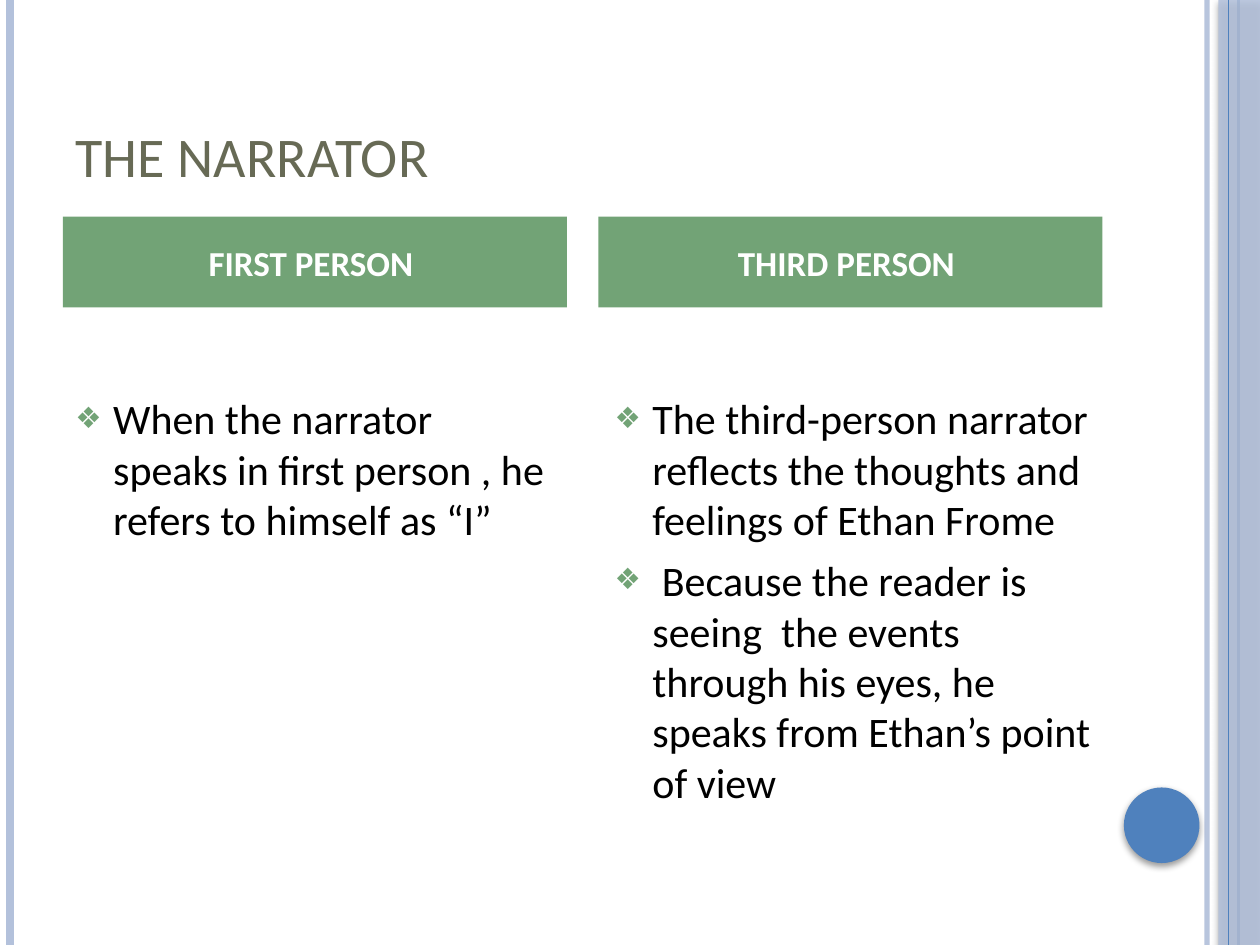
"""Build the slide that compares first-person and third-person narrators."""
from lxml import etree
from pptx import Presentation
from pptx import util as u
from pptx.dml.color import RGBColor
from pptx.enum import shapes, text
from pptx.oxml import ns, parse_xml

BLUE = RGBColor(0x4F, 0x81, 0xBD)
PALE_BLUE = RGBColor(0xB3, 0xC1, 0xDB)
GREEN = RGBColor(0x72, 0xA3, 0x76)
OLIVE = RGBColor(0x67, 0x6A, 0x55)
WHITE = RGBColor(0xFF, 0xFF, 0xFF)
BLACK = RGBColor(0, 0, 0)
FONT = "Calibri"

COLUMNS = [
    (0.5, 0.5, "FIRST PERSON ",
     ["When the narrator speaks in first person , he refers to himself as “I”"]),
    (4.75, 4.78, "THIRD PERSON ",
     ["The third-person narrator reflects the thoughts and feelings of Ethan Frome",
      " Because the reader is seeing  the events through his eyes, he speaks from Ethan’s point of view"]),
]


def write(paragraph, content, size=24, color=BLACK, bold=False, align=text.PP_ALIGN.LEFT, before=0):
    paragraph.text = content
    paragraph.alignment = align
    paragraph.space_before = u.Pt(before)
    font = paragraph.font
    font.name, font.size, font.bold = FONT, u.Pt(size), bold
    font.color.rgb = color


def set_alpha(element, percent):
    color = element.find(".//" + ns.qn("a:srgbClr"))
    etree.SubElement(color, ns.qn("a:alpha")).set("val", str(percent * 1000))


def add_bullet(paragraph):
    properties = paragraph._p.get_or_add_pPr()
    indent = u.Inches(0.3)
    properties.set("marL", str(indent))
    properties.set("indent", str(-indent))
    color = etree.SubElement(properties, ns.qn("a:buClr"))
    etree.SubElement(color, ns.qn("a:srgbClr")).set("val", str(GREEN))
    etree.SubElement(properties, ns.qn("a:buSzPct")).set("val", "70000")
    etree.SubElement(properties, ns.qn("a:buFont")).set("typeface", FONT)
    etree.SubElement(properties, ns.qn("a:buChar")).set("char", "❖")


class SlideBuilder:
    def __init__(self, slide):
        self.slide = slide

    def title(self, content, left, top, width, height):
        shape = self.slide.shapes.title
        shape.left, shape.top = u.Inches(left), u.Inches(top)
        shape.width, shape.height = u.Inches(width), u.Inches(height)
        shape.text_frame.vertical_anchor = text.MSO_ANCHOR.BOTTOM
        write(shape.text_frame.paragraphs[0], content, size=32, color=OLIVE)

    def rule(self, x, color, width, alpha=None):
        line = self.slide.shapes.add_connector(
            shapes.MSO_CONNECTOR.STRAIGHT, u.Inches(x), 0, u.Inches(x), u.Inches(7.5))
        line.line.color.rgb = color
        line.line.width = u.Pt(width)
        properties = line._element.spPr
        if alpha:
            set_alpha(properties, alpha)
        etree.SubElement(properties, ns.qn("a:effectLst"))

    def shape(self, kind, left, top, width, height, color, alpha=None, shadow=False):
        shape = self.slide.shapes.add_shape(
            kind, u.Inches(left), u.Inches(top), u.Inches(width), u.Inches(height))
        shape.fill.solid()
        shape.fill.fore_color.rgb = color
        shape.line.fill.background()
        shape.shadow.inherit = False
        properties = shape._element.spPr
        if alpha:
            set_alpha(properties, alpha)
        if shadow:
            properties.find(ns.qn("a:effectLst")).append(parse_xml(
                f'<a:outerShdw {ns.nsdecls("a")} blurRad="{u.Pt(4)}" dist="{u.Pt(2)}" dir="5400000"'
                ' rotWithShape="0"><a:srgbClr val="000000"><a:alpha val="40000"/></a:srgbClr></a:outerShdw>'))
        return shape

    def heading(self, content, left):
        shape = self.shape(shapes.MSO_SHAPE.RECTANGLE, left, 1.72, 4, 0.72, GREEN)
        shape.text_frame.vertical_anchor = text.MSO_ANCHOR.MIDDLE
        write(shape.text_frame.paragraphs[0], content, size=20, color=WHITE, bold=True,
              align=text.PP_ALIGN.CENTER)

    def bullets(self, items, left):
        box = self.slide.shapes.add_textbox(u.Inches(left), u.Inches(3.07), u.Inches(4), u.Inches(3.76))
        frame = box.text_frame
        frame.word_wrap = True
        for index, item in enumerate(items):
            paragraph = frame.add_paragraph() if index else frame.paragraphs[0]
            add_bullet(paragraph)
            write(paragraph, item, before=6 if index else 0)


def main():
    presentation = Presentation()
    presentation.slide_width, presentation.slide_height = u.Inches(10), u.Inches(7.5)
    builder = SlideBuilder(presentation.slides.add_slide(presentation.slide_layouts[5]))
    builder.rule(9.58, PALE_BLUE, 3, alpha=93)
    builder.rule(0.08, PALE_BLUE, 4.5)
    builder.rule(9.83, BLUE, 1.5)
    builder.shape(shapes.MSO_SHAPE.RECTANGLE, 9.67, 0, 0.33, 7.5, PALE_BLUE, alpha=87, shadow=True)
    builder.rule(9.75, BLUE, 0.75)
    builder.shape(shapes.MSO_SHAPE.OVAL, 8.92, 6.25, 0.6, 0.6, BLUE, shadow=True)
    builder.title("THE NARRATOR", 0.5, 0.3, 8.25, 1.25)
    for heading_left, list_left, heading, items in COLUMNS:
        builder.heading(heading, heading_left)
        builder.bullets(items, list_left)
    presentation.save("out.pptx")


if __name__ == "__main__":
    main()
